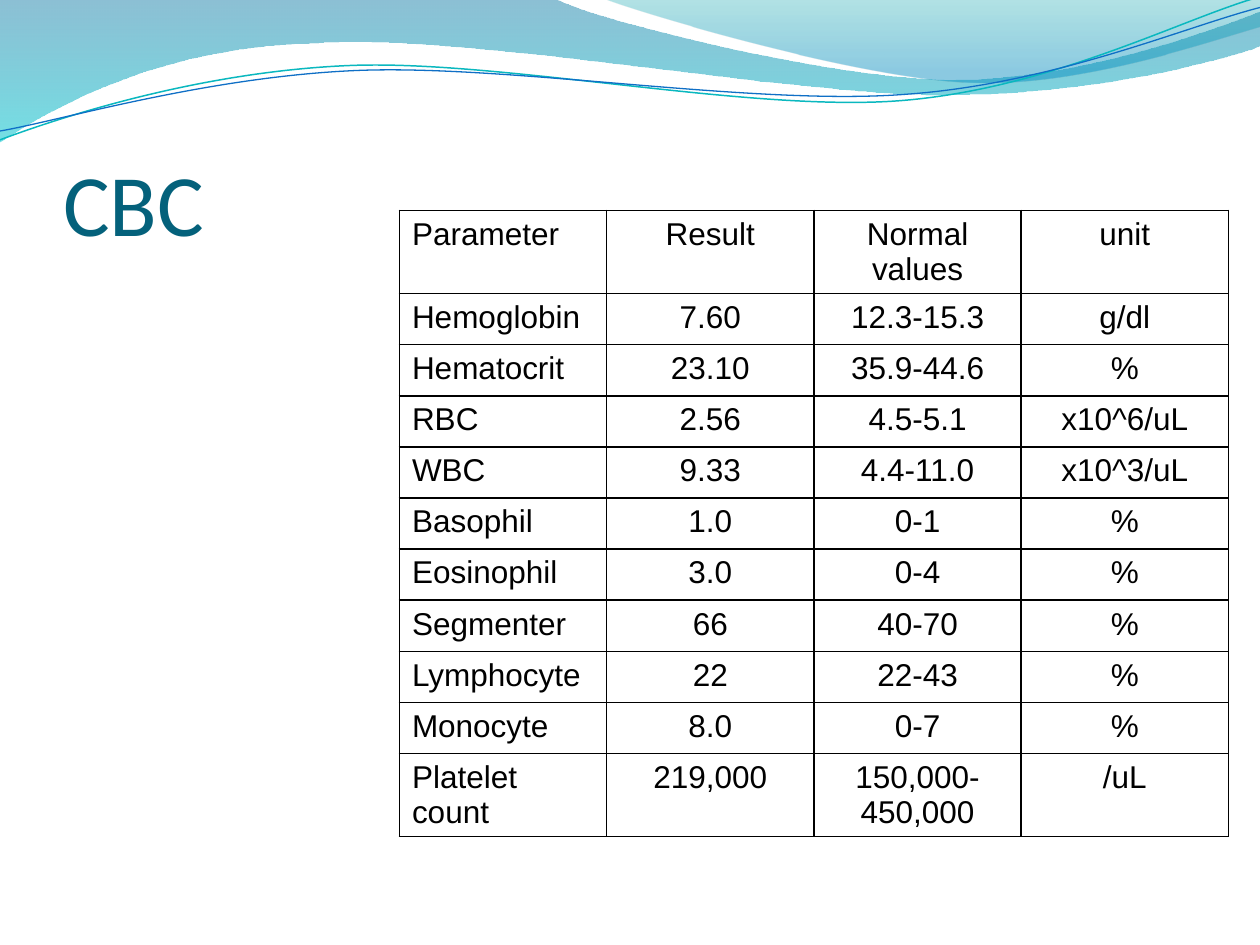
from math import cos, radians, sin

from lxml import etree
from pptx import Presentation
from pptx.dml.color import RGBColor
from pptx.enum.text import MSO_ANCHOR, PP_ALIGN
from pptx.oxml.ns import qn
from pptx.util import Inches, Pt

LEFT, CENTER, BOTTOM = PP_ALIGN.LEFT, PP_ALIGN.CENTER, MSO_ANCHOR.BOTTOM

BLACK = RGBColor(0x00, 0x00, 0x00)
TITLE_BLUE = RGBColor(0x04, 0x61, 0x7B)
DEEP_BLUE = RGBColor(0x00, 0x74, 0xA1)
AQUA = RGBColor(0x00, 0xC6, 0xCF)
TEAL = RGBColor(0x00, 0xA1, 0xA9)
SKY_BLUE = RGBColor(0x00, 0x8B, 0xBF)
LINE_TEAL = RGBColor(0x0A, 0xB8, 0xBF)
LINE_BLUE = RGBColor(0x0F, 0x6F, 0xC6)

LINE_TILT = 2.7  # degrees counter-clockwise

# Each outline is a start point, then straight (2 numbers) or Bezier (6 numbers) steps
BROAD_WAVE = [
    (0, 0), (4.4, -0.01),
    (4.76, 0.17, 6.64, 0.63, 7.58, 0.63), (8.53, 0.63, 9.58, 0.26, 10, 0.09),
    (10.01, 0.36),
    (9.83, 0.44, 8.7, 0.76, 7.46, 0.75), (6.22, 0.75, 3.82, 0.28, 2.57, 0.34),
    (1.29, 0.36, 0.46, 0.83, -0.01, 1.13), (0, 0),
]
RIGHT_WAVE = [
    (4.79, -0.01),
    (5.09, 0.11, 6.82, 0.62, 7.69, 0.65), (8.56, 0.69, 9.61, 0.32, 10, 0.21),
    (10, 0), (4.79, -0.01),
]
TEAL_LINE = [
    (0, 1.11),
    (0.48, 0.93, 1.58, 0.57, 2.77, 0.52), (3.95, 0.47, 5.93, 0.89, 7.13, 0.8),
    (8.33, 0.71, 9.38, 0.15, 9.98, -0.02),
]
BLUE_LINE = [
    (0, 1.04),
    (0.47, 0.96, 1.64, 0.61, 2.83, 0.56), (4.03, 0.51, 5.97, 0.84, 7.17, 0.75),
    (8.36, 0.67, 9.41, 0.21, 10, 0.06),
]

BLOOD_COUNT = [
    ("Parameter", "Result", "Normal values", "unit"),
    ("Hemoglobin", "7.60", "12.3-15.3", "g/dl"),
    ("Hematocrit", "23.10", "35.9-44.6", "%"),
    ("RBC", "2.56", "4.5-5.1", "x10^6/uL"),
    ("WBC", "9.33", "4.4-11.0", "x10^3/uL"),
    ("Basophil", "1.0", "0-1", "%"),
    ("Eosinophil", "3.0", "0-4", "%"),
    ("Segmenter", "66", "40-70", "%"),
    ("Lymphocyte", "22", "22-43", "%"),
    ("Monocyte", "8.0", "0-7", "%"),
    ("Platelet count", "219,000", "150,000-450,000", "/uL"),
]


def level(outline, center):
    """Turn an outline clockwise about center, so that its tilt can be a rotation."""
    cx, cy = center
    cosine, sine = cos(radians(LINE_TILT)), sin(radians(LINE_TILT))
    turned = []
    for step in outline:
        flat = []
        for x, y in zip(step[::2], step[1::2]):
            flat += [cx + (x - cx) * cosine - (y - cy) * sine,
                     cy + (x - cx) * sine + (y - cy) * cosine]
        turned.append(tuple(flat))
    return turned


def add_outline(page, outline, close):
    points = [(Inches(x), Inches(y))
              for step in outline for x, y in zip(step[::2], step[1::2])]
    builder = page.shapes.build_freeform(*points[0])
    builder.add_line_segments(points[1:], close=close)
    shape = builder.convert_to_shape()
    shape.shadow.inherit = False

    # Join the three points of each Bezier step into one curve
    segments = iter(list(shape._element.iter(qn("a:lnTo"))))
    for step in outline[1:]:
        first = next(segments)
        if len(step) == 6:
            curve = etree.Element(qn("a:cubicBezTo"))
            first.addprevious(curve)
            for segment in (first, next(segments), next(segments)):
                curve.append(segment[0])
                segment.getparent().remove(segment)
    return shape


def add_wave(page, outline, stops):
    """Add a filled wave; stops hold position, colour and opacity percent."""
    wave = add_outline(page, outline, close=True)
    wave.line.fill.background()
    wave.fill.gradient()
    wave.fill.gradient_angle = 270
    for stop, (position, color, _) in zip(wave.fill.gradient_stops, stops):
        stop.position = position
        stop.color.rgb = color
    gradient = wave._element.spPr.find(qn("a:gradFill"))
    for color_xml, (_, _, opacity) in zip(gradient.iter(qn("a:srgbClr")), stops):
        etree.SubElement(color_xml, qn("a:alpha"), val=str(opacity * 1000))


def add_wave_line(page, outline, center, color, width):
    curve = add_outline(page, level(outline, center), close=False)
    curve.rotation = 360 - LINE_TILT
    curve.fill.background()
    curve.line.color.rgb = color
    curve.line.width = Pt(width)


def set_title(page, text):
    title = page.shapes.title
    title.left, title.top = Inches(0.5), Inches(0.77)
    title.width, title.height = Inches(9), Inches(1.25)
    frame = title.text_frame
    frame.text = text
    frame.vertical_anchor = BOTTOM
    frame.margin_left = frame.margin_right = frame.margin_bottom = 0
    frame.margin_top = Inches(0.05)
    para = frame.paragraphs[0]
    para.alignment = LEFT
    para.font.name, para.font.size = "Calibri", Pt(50)
    para.font.color.rgb = TITLE_BLUE


def set_borders(cell):
    properties = cell._tc.get_or_add_tcPr()
    for index, side in enumerate(("lnL", "lnR", "lnT", "lnB")):
        border = etree.Element(qn(f"a:{side}"), w=str(Pt(1)))
        fill = etree.SubElement(border, qn("a:solidFill"))
        etree.SubElement(fill, qn("a:srgbClr"), val=str(BLACK))
        properties.insert(index, border)


def add_table(page, rows):
    height = Inches(5.05)
    holder = page.shapes.add_table(
        len(rows), len(rows[0]), Inches(3.17), Inches(1.67), Inches(6.58), height
    )
    table = holder.table
    table.first_row = table.horz_banding = False
    for r, row in enumerate(rows):
        table.rows[r].height = Pt(29.2)
        for c, text in enumerate(row):
            cell = table.cell(r, c)
            cell.text = text
            cell.fill.background()
            set_borders(cell)
            para = cell.text_frame.paragraphs[0]
            para.alignment = CENTER if c else LEFT
            para.font.name, para.font.size = "Arial", Pt(18)
            para.font.color.rgb = BLACK
    holder.height = height  # rows with two lines of text grow into this


def main():
    deck = Presentation()
    deck.slide_width, deck.slide_height = Inches(10), Inches(7.5)
    page = deck.slides.add_slide(deck.slide_layouts[5])

    # Wave band along the top
    add_wave(page, BROAD_WAVE, [(0, DEEP_BLUE, 45), (1, AQUA, 55)])
    add_wave(page, RIGHT_WAVE, [(0, TEAL, 30), (0.8, SKY_BLUE, 45)])
    add_wave_line(page, TEAL_LINE, (4.99, 0.58), LINE_TEAL, 0.85)
    add_wave_line(page, BLUE_LINE, (5, 0.59), LINE_BLUE, 0.75)

    # Title and blood count results
    set_title(page, "CBC")
    add_table(page, BLOOD_COUNT)

    deck.save("out.pptx")


if __name__ == "__main__":
    main()
